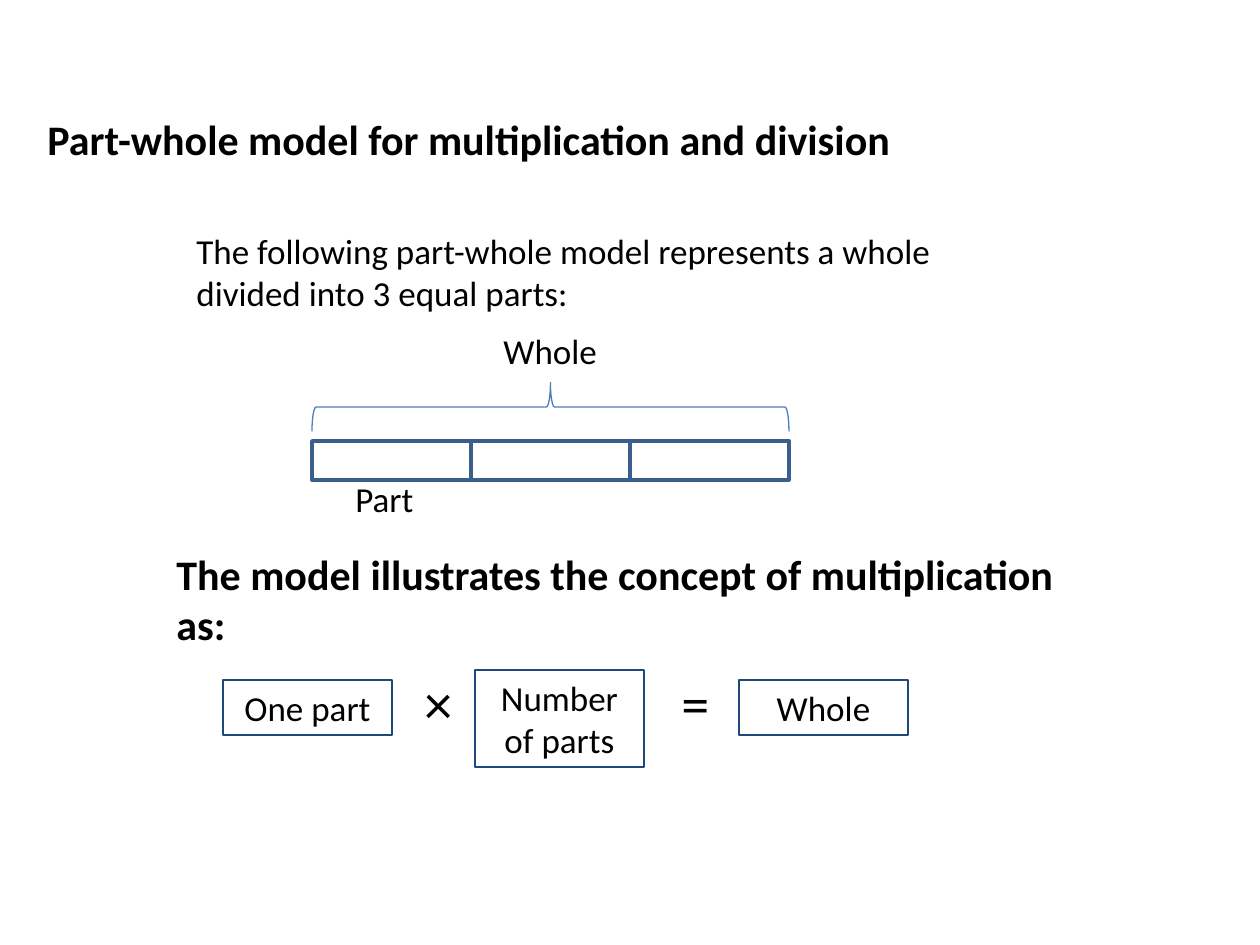
import pptx
import pptx.util
import pptx.dml.color
import pptx.enum.shapes
import pptx.enum.text

PX_PER_INCH = 126
FONT = "Calibri"
BLACK = "000000"
BAR_LINE = "3A5F8C"
BRACE_LINE = "4B7EBC"
TERM_LINE = "1F497D"
BAR_LEFT, BAR_TOP, PART_WIDTH, PART_HEIGHT, PART_COUNT = 312, 441, 159, 39, 3
TERM_WIDTH = 169
TERMS = [("One part", 223, 680, 55), ("Number of parts", 475, 670, 97), ("Whole", 739, 680, 55)]
OPERATORS = [("×", 412), ("=", 669)]


def px(length):
    """Turn a length in px into EMU."""
    return pptx.util.Emu(round(length * 914400 / PX_PER_INCH))


def color(value):
    """Turn a hex string into a colour."""
    return pptx.dml.color.RGBColor.from_string(value)


def write(shape, text, size, bold=False, align=pptx.enum.text.PP_ALIGN.LEFT,
          anchor=pptx.enum.text.MSO_ANCHOR.TOP):
    """Set and format the text of a shape."""
    frame = shape.text_frame
    frame.text = text
    frame.word_wrap = True
    frame.vertical_anchor = anchor
    para = frame.paragraphs[0]
    para.alignment = align
    font = para.runs[0].font
    font.name = FONT
    font.size = pptx.util.Pt(size)
    font.bold = bold
    font.color.rgb = color(BLACK)


def add_text(page, text, left, top, width, height, size=20, **style):
    """Add a text box."""
    box = page.shapes.add_textbox(px(left), px(top), px(width), px(height))
    write(box, text, size, **style)


def add_outline(page, kind, left, top, width, height, line, weight):
    """Add an unfilled preset shape."""
    shape = page.shapes.add_shape(kind, px(left), px(top), px(width), px(height))
    shape.shadow.inherit = False
    shape.fill.background()
    shape.line.color.rgb = color(line)
    shape.line.width = pptx.util.Pt(weight)
    return shape


def add_bar_model(page):
    """Draw the equal parts under a brace that spans the whole."""
    shapes = pptx.enum.shapes.MSO_SHAPE
    for index in range(PART_COUNT):
        add_outline(page, shapes.RECTANGLE, BAR_LEFT + index * PART_WIDTH, BAR_TOP,
                    PART_WIDTH, PART_HEIGHT, BAR_LINE, 2)
    add_text(page, "Part", 343, 471, 89, 55)
    span, depth, middle = PART_COUNT * PART_WIDTH, 49, 407
    brace = add_outline(page, shapes.RIGHT_BRACE, BAR_LEFT + (span - depth) / 2,
                        middle - span / 2, depth, span, BRACE_LINE, 0.75)
    brace.rotation = 270
    add_text(page, "Whole", 491, 323, 134, 55)


def add_equation(page):
    """Draw the boxed terms and the operators between them."""
    for text, left, top, height in TERMS:
        term = add_outline(page, pptx.enum.shapes.MSO_SHAPE.RECTANGLE, left, top,
                           TERM_WIDTH, height, TERM_LINE, 0.75)
        write(term, text, 20, align=pptx.enum.text.PP_ALIGN.CENTER)
    for text, left in OPERATORS:
        add_text(page, text, left, 662, 49, 81, size=32)


def main():
    """Build the slide and save it."""
    deck = pptx.Presentation()
    deck.slide_width, deck.slide_height = px(1260), px(945)
    page = deck.slides.add_slide(deck.slide_layouts[6])
    add_text(page, "Part-whole model for multiplication and division", 35, 37, 1201, 203,
             size=24, bold=True, anchor=pptx.enum.text.MSO_ANCHOR.MIDDLE)
    add_text(page, "The following part-whole model represents a whole divided into 3 equal parts:",
             184, 223, 774, 97)
    add_text(page, "The model illustrates the concept of multiplication as:",
             164, 542, 922, 115, size=24, bold=True)
    add_bar_model(page)
    add_equation(page)
    deck.save("out.pptx")


if __name__ == "__main__":
    main()
